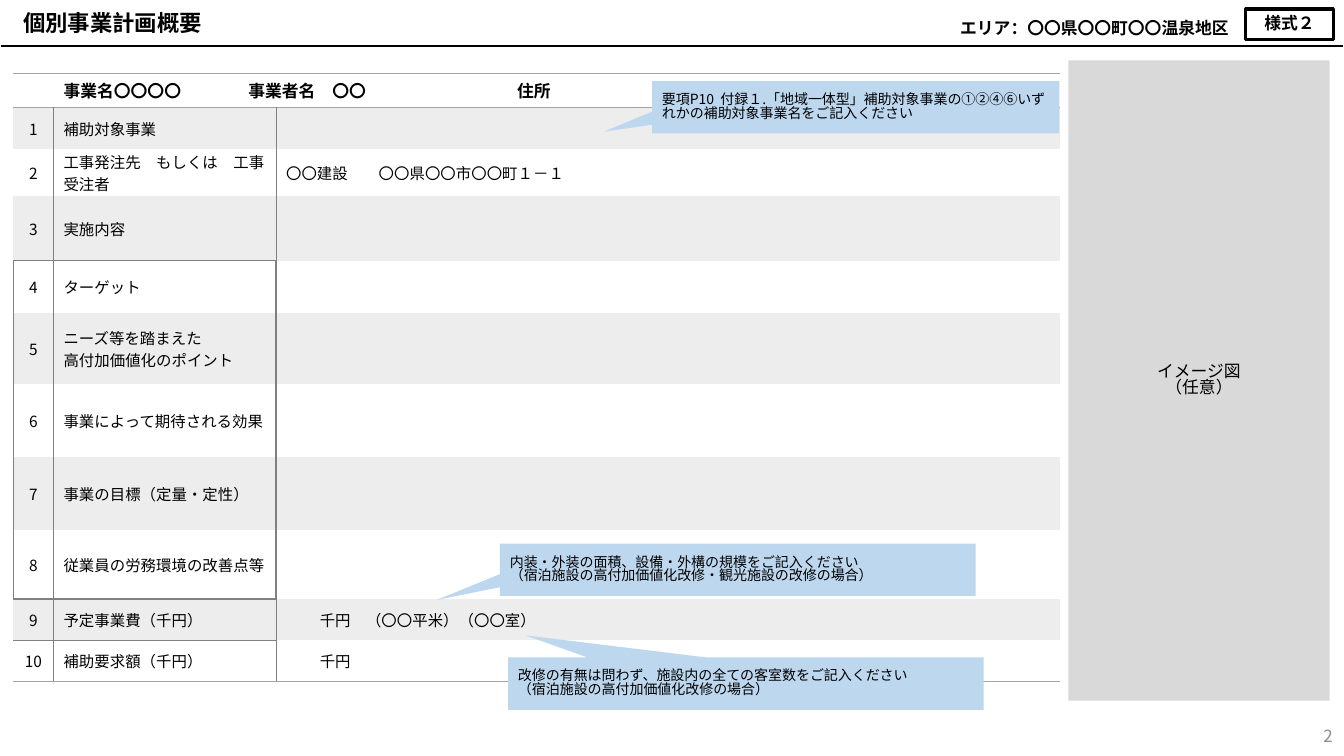
"""Build the one-page project plan summary form."""
from lxml.etree import SubElement
from pptx import Presentation
from pptx.dml.color import RGBColor
from pptx.enum.shapes import MSO_CONNECTOR, MSO_SHAPE
from pptx.enum.text import MSO_ANCHOR, MSO_AUTO_SIZE, PP_ALIGN
from pptx.oxml.ns import qn
from pptx.util import Pt

FONT = "Noto Sans CJK JP"
BLACK = RGBColor(0x00, 0x00, 0x00)
RULE_GRAY = RGBColor(0x80, 0x80, 0x80)
EDGE_GRAY = RGBColor(0xA5, 0xA5, 0xA5)
BAND_GRAY = RGBColor(0xED, 0xED, 0xED)
IMAGE_GRAY = RGBColor(0xD9, 0xD9, 0xD9)
NUMBER_GRAY = RGBColor(0x8C, 0x8C, 0x8C)
NOTE_BLUE = RGBColor(0xBD, 0xD7, 0xEE)

PLAIN_STYLE = "{2D5ABB26-0587-4C30-8999-92F81FD0307C}"
TIGHT = 0.83
UNIT_INDENT = Pt(24)
COLUMN_WIDTHS = (28.8, 159, 560)
HEADER = "事業名〇〇〇〇\t事業者名　〇〇\t住所"
HEADER_HEIGHT = 24.6
HEADER_TABS = (132, 324)
ITEMS = (
    (29.5, ["補助対象事業"], ""),
    (33.5, ["工事発注先　もしくは　工事受注者"], "〇〇建設　　〇〇県〇〇市〇〇町１－１"),
    (46.3, ["実施内容"], ""),
    (37.4, ["ターゲット"], ""),
    (50.6, ["ニーズ等を踏まえた", "高付加価値化のポイント"], ""),
    (52.3, ["事業によって期待される効果"], ""),
    (52.3, ["事業の目標（定量・定性）"], ""),
    (49, ["従業員の労務環境の改善点等"], ""),
    (29.4, ["予定事業費（千円）"], "千円　（〇〇平米）（〇〇室）"),
    (29.4, ["補助要求額（千円）"], "千円"),
)
BOXED_ROWS = range(4, 9)
INDENTED_ROWS = (9, 10)
CALLOUTS = (
    ((465.8, 57.9, 291, 37.4), (-0.618, 0.466),
     "要項P10\u00a0\u00a0付録１.「地域一体型」補助対象事業の①②④⑥いずれかの補助対象事業名をご記入ください"),
    ((357.1, 388.3, 339.8, 37.4), (-0.633, 0.577),
     "内装・外装の面積、設備・外構の規模をご記入ください\n（宿泊施設の高付加価値化改修・観光施設の改修の場合）"),
    ((362.9, 469.6, 339.8, 37.4), (-0.463, -0.922),
     "改修の有無は問わず、施設内の全ての客室数をご記入ください\n（宿泊施設の高付加価値化改修の場合）"),
)


def write(frame, paragraphs, size, bold=False, color=BLACK, align=PP_ALIGN.LEFT, spacing=None):
    """Fill a text frame with styled paragraphs, a newline being a line break."""
    frame.word_wrap = True
    for index, text in enumerate(paragraphs):
        para = frame.add_paragraph() if index else frame.paragraphs[0]
        para.alignment = align
        if spacing:
            para.line_spacing = spacing
        for number, line in enumerate(text.split("\n")):
            if number:
                para.add_line_break()
            span = para.add_run()
            span.text = line
            span.font.size = Pt(size)
            span.font.bold = bold
            span.font.color.rgb = color
            span.font.name = FONT
            SubElement(span.font._element, qn("a:ea"), typeface=FONT)


def add_box(page, kind, place, fill=None, line_width=None):
    """Add a flat preset shape with an optional fill and black outline."""
    box = page.shapes.add_shape(kind, *map(Pt, place))
    box.shadow.inherit = False
    if fill is None:
        box.fill.background()
    else:
        box.fill.solid()
        box.fill.fore_color.rgb = fill
    if line_width is None:
        box.line.fill.background()
    else:
        box.line.color.rgb = BLACK
        box.line.width = Pt(line_width)
    box.text_frame.vertical_anchor = MSO_ANCHOR.MIDDLE
    return box


def add_label(page, place, text, anchor=MSO_ANCHOR.TOP, **style):
    """Add a right-aligned text box."""
    box = page.shapes.add_textbox(*map(Pt, place))
    box.text_frame.vertical_anchor = anchor
    write(box.text_frame, [text], 12, align=PP_ALIGN.RIGHT, **style)


def add_title(page, text):
    """Place the slide title and the rule below it."""
    title = page.shapes.title
    title.left, title.top, title.width, title.height = map(Pt, (9.4, 6.5, 936, 26.6))
    title.text_frame.auto_size = MSO_AUTO_SIZE.NONE
    title.text_frame.vertical_anchor = MSO_ANCHOR.TOP
    write(title.text_frame, [text], 16, bold=True, spacing=TIGHT)
    rule = page.shapes.add_connector(MSO_CONNECTOR.STRAIGHT, *map(Pt, (0.7, 33, 959, 33)))
    rule.line.color.rgb = BLACK
    rule.line.width = Pt(1.5)
    SubElement(rule._element.spPr, qn("a:effectLst"))


def set_borders(cell, borders):
    """Draw the given sides of a cell, each a colour and a width."""
    properties = cell._tc.get_or_add_tcPr()
    for position, side in enumerate("LRTB"):
        color, width = borders.get(side, (None, 0))
        line = SubElement(properties, qn(f"a:ln{side}"), w=str(Pt(width)))
        properties.insert(position, line)
        if color is None:
            SubElement(line, qn("a:noFill"))
        else:
            fill = SubElement(line, qn("a:solidFill"))
            SubElement(fill, qn("a:srgbClr"), val=str(color))


def cell_borders(row, column):
    """Work out the borders of a table cell."""
    thin, thick, edge = (RULE_GRAY, 0.5), (RULE_GRAY, 1), (EDGE_GRAY, 1)
    last = len(ITEMS)
    if row == 0:
        return {"T": edge, "B": edge}
    divider = thick if row in BOXED_ROWS else thin
    borders = {}
    if column == 0:
        borders["R"] = thin
        if row in BOXED_ROWS:
            borders["L"] = thick
    else:
        borders["L"] = thin if column == 1 else divider
        if column == 1:
            borders["R"] = divider
    if column < 2:
        if row in (4, 9):
            borders["T"] = thick
        if row in (3, 8):
            borders["B"] = thick
        if row == 9:
            borders["B"] = thin
        if row == last:
            borders["T"] = thin
    if row == 1:
        borders["T"] = edge
    if row == last:
        borders["B"] = edge
    return borders


def fill_cell(cell, row, column, paragraphs, **style):
    """Write one table cell with its band colour and borders."""
    cell.margin_top = cell.margin_bottom = 0
    cell.vertical_anchor = MSO_ANCHOR.MIDDLE
    if row % 2:
        cell.fill.solid()
        cell.fill.fore_color.rgb = BAND_GRAY
    else:
        cell.fill.background()
    if any(paragraphs):
        write(cell.text_frame, paragraphs, **style)
    else:
        SubElement(cell.text_frame.paragraphs[0]._p, qn("a:endParaRPr"), sz="1100")
    set_borders(cell, cell_borders(row, column))


def add_plan_table(page):
    """Add the numbered table of plan items."""
    heights = [HEADER_HEIGHT] + [item[0] for item in ITEMS]
    place = map(Pt, (9.4, 52.4, sum(COLUMN_WIDTHS), sum(heights)))
    table = page.shapes.add_table(len(heights), len(COLUMN_WIDTHS), *place).table
    table.first_row = table.horz_banding = False
    table._tbl.tblPr.find(qn("a:tableStyleId")).text = PLAIN_STYLE
    for column, width in zip(table.columns, COLUMN_WIDTHS):
        column.width = Pt(width)
    for row, height in zip(table.rows, heights):
        row.height = Pt(height)
    table.cell(0, 1).merge(table.cell(0, 2))
    for column, text in enumerate(("", HEADER, "")):
        fill_cell(table.cell(0, column), 0, column, [text], size=12, bold=True)
    stops = SubElement(table.cell(0, 1).text_frame.paragraphs[0]._p.get_or_add_pPr(), qn("a:tabLst"))
    for stop in HEADER_TABS:
        SubElement(stops, qn("a:tab"), pos=str(Pt(stop)), algn="l")
    for row, (_, name, value) in enumerate(ITEMS, 1):
        fill_cell(table.cell(row, 0), row, 0, [str(row)], size=11, align=PP_ALIGN.CENTER)
        fill_cell(table.cell(row, 1), row, 1, name, size=11)
        fill_cell(table.cell(row, 2), row, 2, [value], size=11)
        if row in INDENTED_ROWS:
            para = table.cell(row, 2).text_frame.paragraphs[0]
            para._p.get_or_add_pPr().set("marL", str(UNIT_INDENT))


def add_callout(page, place, pointer, text):
    """Add a blue instruction callout whose pointer has the given offset."""
    box = add_box(page, MSO_SHAPE.RECTANGULAR_CALLOUT, place, NOTE_BLUE)
    box.adjustments[0], box.adjustments[1] = pointer
    write(box.text_frame, [text], 10, spacing=TIGHT)


def main():
    """Build and save the slide."""
    deck = Presentation()
    deck.slide_width, deck.slide_height = Pt(960), Pt(540)
    page = deck.slides.add_slide(deck.slide_layouts[5])
    add_title(page, "個別事業計画概要")
    add_plan_table(page)
    add_label(page, (743, 511.2, 216, 28.8), "2", MSO_ANCHOR.MIDDLE, color=NUMBER_GRAY)
    add_label(page, (645.1, 5.8, 239.8, 27.4), "エリア：〇〇県〇〇町〇〇温泉地区", bold=True, spacing=1.25)
    form = add_box(page, MSO_SHAPE.RECTANGLE, (889.9, 6.5, 62.6, 21.6), line_width=2.25)
    write(form.text_frame, ["様式２"], 12, bold=True, align=PP_ALIGN.CENTER, spacing=TIGHT)
    image_area = add_box(page, MSO_SHAPE.RECTANGLE, (763.2, 43.2, 186.5, 457.2), IMAGE_GRAY)
    write(image_area.text_frame, ["イメージ図", "（任意）"], 12, align=PP_ALIGN.CENTER, spacing=TIGHT)
    for place, pointer, text in CALLOUTS:
        add_callout(page, place, pointer, text)
    deck.save("out.pptx")


if __name__ == "__main__":
    main()
